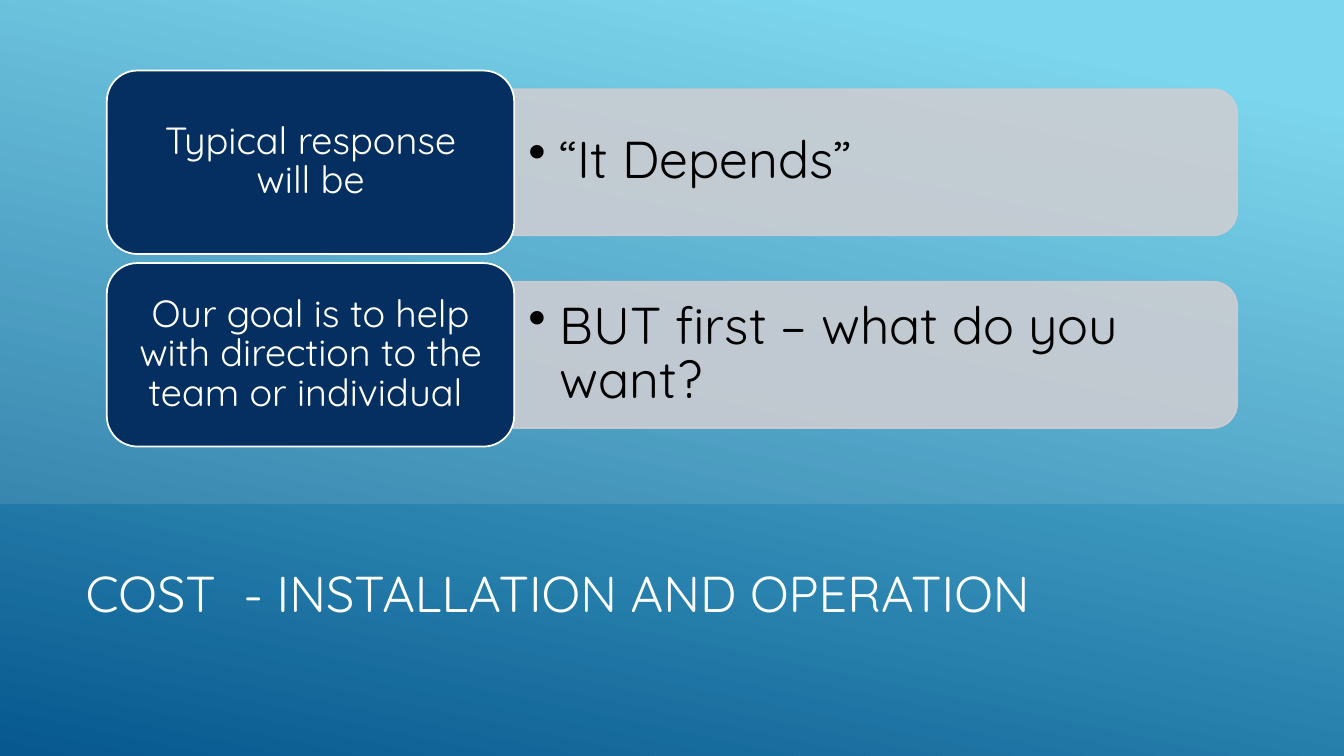
from lxml import etree
from pptx import Presentation, util as u
from pptx.dml import color
from pptx.enum import shapes, text
from pptx.oxml import ns

TITLE = "COST  - INSTALLATION AND OPERATION"
ROWS = [
    ("Typical response will be", "“It Depends”"),
    ("Our goal is to help with direction to the team or individual ",
     "BUT first – what do you want?"),
]
BACKDROP = [(0.1, "6ED2EB"), (1, "06588E")]
WHITE, BLACK, NAVY, GREY = "FFFFFF", "000000", "052F61", "CCCDD2"
FONT = "Quicksand"

SLIDE_W, SLIDE_H, UPPER_H = 13.33, 7.5, 5
LABEL_X, LABEL_Y, LABEL_W, LABEL_H = 1.06, 0.7, 4.04, 1.82
ROW_STEP = 1.91
PANEL_X, PANEL_W, PANEL_H = 5.09, 7.18, 1.45
ANSWER_W, ANSWER_H = 7.11, 1.31
BULLET_INDENT = 0.31

TITLE_STYLE = dict(size=36, tint=WHITE, align=text.PP_ALIGN.LEFT,
                   spacing=1, insets=(0.1, 0.05))
LABEL_STYLE = dict(size=27, tint=WHITE, align=text.PP_ALIGN.CENTER,
                   spacing=0.87, insets=(0.19, 0.15))
ANSWER_STYLE = dict(size=37, tint=BLACK, align=text.PP_ALIGN.LEFT,
                    spacing=0.87, insets=(0.15, 0.08))


def rgb(code):
    return color.RGBColor.from_string(code)


def apply(target, values):
    for name, value in values.items():
        setattr(target, name, value)


def place(kind, x, y, w, h, fill=None, line=None, opacity=100):
    part = slide.shapes.add_shape(kind, *map(u.Inches, (x, y, w, h)))
    part.shadow.inherit = False
    if fill:
        part.fill.solid()
        part.fill.fore_color.rgb = rgb(fill)
    if line:
        part.line.color.rgb = rgb(line)
        part.line.width = u.Pt(1.25)
    else:
        part.line.fill.background()
    if opacity < 100:
        for tone in part._element.spPr.iter(ns.qn("a:srgbClr")):
            etree.SubElement(tone, ns.qn("a:alpha"), val=str(opacity * 1000))
    return part


def write(part, words, size, tint, align, spacing, insets):
    side, edge = map(u.Inches, insets)
    frame = part.text_frame
    apply(frame, dict(word_wrap=True, vertical_anchor=text.MSO_ANCHOR.MIDDLE,
                      margin_left=side, margin_right=side,
                      margin_top=edge, margin_bottom=edge))
    line = frame.paragraphs[0]
    apply(line, dict(alignment=align, line_spacing=spacing))
    run = line.add_run()
    run.text = words
    apply(run.font, dict(name=FONT, size=u.Pt(size)))
    run.font.color.rgb = rgb(tint)
    return line


def write_box(words, x, y, w, h, style):
    box = slide.shapes.add_textbox(*map(u.Inches, (x, y, w, h)))
    return write(box, words, **style)


def add_bullet(line):
    props = line._p.get_or_add_pPr()
    indent = u.Inches(BULLET_INDENT)
    props.set("marL", str(indent))
    props.set("indent", str(-indent))
    etree.SubElement(props, ns.qn("a:buChar"), char="•")


deck = Presentation()
apply(deck, dict(slide_width=u.Inches(SLIDE_W), slide_height=u.Inches(SLIDE_H)))
slide = deck.slides.add_slide(deck.slide_layouts[6])
preset = shapes.MSO_SHAPE

backdrop = place(preset.RECTANGLE, 0, 0, SLIDE_W, SLIDE_H)
backdrop.fill.gradient()
backdrop.fill.gradient_angle = 360 - 102
for stop, (position, tint) in zip(backdrop.fill.gradient_stops, BACKDROP):
    stop.position = position
    stop.color.rgb = rgb(tint)

write_box(TITLE, 0.75, 5.25, 10.14, 1.26, TITLE_STYLE)
place(preset.RECTANGLE, 0, 0, SLIDE_W, UPPER_H, fill=WHITE, opacity=10)

for index, (prompt, answer) in enumerate(ROWS):
    top = LABEL_Y + index * ROW_STEP
    middle = top + LABEL_H / 2
    panel = place(preset.ROUND_2_SAME_RECTANGLE,
                  PANEL_X + (PANEL_W - PANEL_H) / 2, middle - PANEL_W / 2,
                  PANEL_H, PANEL_W, fill=GREY, line=GREY, opacity=90)
    panel.rotation = 90
    add_bullet(write_box(answer, PANEL_X, middle - ANSWER_H / 2,
                         ANSWER_W, ANSWER_H, ANSWER_STYLE))
    label = place(preset.ROUNDED_RECTANGLE, LABEL_X, top, LABEL_W, LABEL_H,
                  fill=NAVY, line=WHITE)
    write(label, prompt, **LABEL_STYLE)

deck.save("out.pptx")
